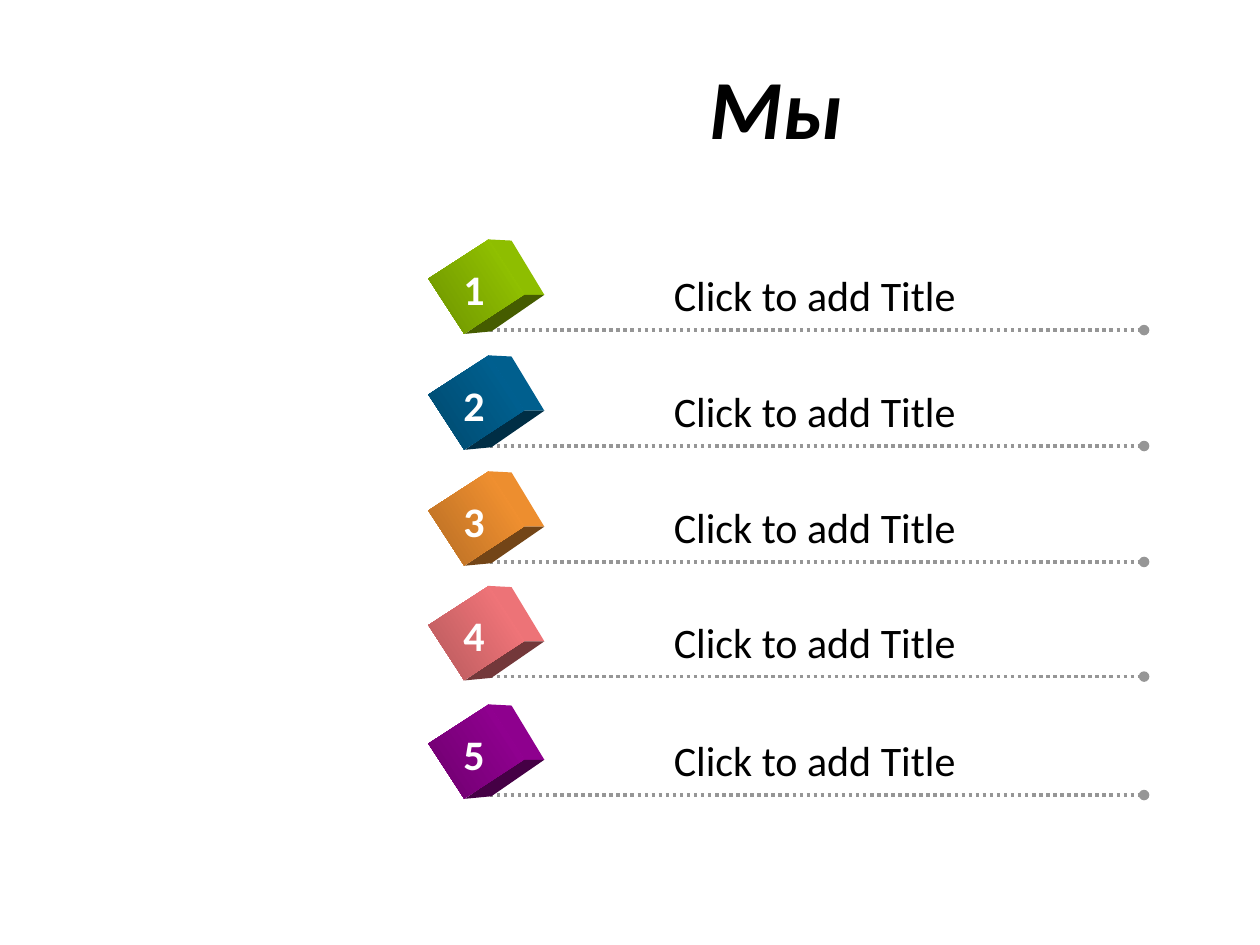
from dataclasses import dataclass

from lxml.etree import SubElement
from pptx import Presentation
from pptx.dml.color import RGBColor
from pptx.enum.dml import MSO_LINE
from pptx.enum.shapes import MSO_CONNECTOR, MSO_SHAPE
from pptx.enum.text import MSO_ANCHOR, MSO_AUTO_SIZE, PP_ALIGN
from pptx.oxml.ns import qn
from pptx.shapes.group import GroupShape
from pptx.slide import Slide
from pptx.util import Inches, Pt

FONT = "Calibri"
BLACK = RGBColor(0x00, 0x00, 0x00)
WHITE = RGBColor(0xFF, 0xFF, 0xFF)
GRAY = RGBColor(0x96, 0x96, 0x96)
GREEN = RGBColor(0x99, 0xCC, 0x00)
DARK_GREEN = RGBColor(0x6D, 0x92, 0x00)
BLUE = RGBColor(0x00, 0x66, 0x99)
DARK_BLUE = RGBColor(0x00, 0x49, 0x6D)
ORANGE = RGBColor(0xFF, 0x99, 0x33)
DARK_ORANGE = RGBColor(0xB6, 0x6D, 0x24)
PINK = RGBColor(0xFF, 0x7C, 0x80)
DARK_PINK = RGBColor(0xB6, 0x59, 0x5C)
PURPLE = RGBColor(0x99, 0x00, 0x99)
DARK_PURPLE = RGBColor(0x6D, 0x00, 0x6D)

CUBE_LEFT, CUBE_WIDTH, CUBE_HEIGHT = 3.52, 0.52, 0.57
# Corners of the cube's side faces, measured from the row's line
RIGHT_FACE = [(3.87, -0.72), (4.06, -0.71), (4.32, -0.28), (4.14, -0.28)]
BOTTOM_FACE = [(3.69, 0.03), (4.14, -0.28), (4.32, -0.28), (3.90, 0.01)]


@dataclass(frozen=True)
class Row:
    number: str
    line_y: float
    light: RGBColor
    dark: RGBColor
    title: str = "Click to add Title"


ROWS = [
    Row("1", 2.62, GREEN, DARK_GREEN),
    Row("2", 3.54, BLUE, DARK_BLUE),
    Row("3", 4.46, ORANGE, DARK_ORANGE),
    Row("4", 5.37, PINK, DARK_PINK),
    Row("5", 6.31, PURPLE, DARK_PURPLE),
]


def shade(color: RGBColor, factor: float) -> RGBColor:
    return RGBColor(*(round(channel * factor) for channel in color))


def add_title(slide: Slide, text: str) -> None:
    title = slide.shapes.title
    title.left, title.top = Inches(1.85), Inches(0.4)
    title.width, title.height = Inches(8.62), Inches(0.98)
    title.text_frame.text = text
    title.text_frame.vertical_anchor = MSO_ANCHOR.MIDDLE
    paragraph = title.text_frame.paragraphs[0]
    paragraph.alignment = PP_ALIGN.CENTER
    paragraph.line_spacing = 0.9
    font = paragraph.font
    font.name, font.size = FONT, Pt(48)
    font.bold = font.italic = True
    font.color.rgb = BLACK


def add_dotted_line(group: GroupShape, y: float) -> None:
    connector = group.shapes.add_connector(
        MSO_CONNECTOR.STRAIGHT, Inches(3.83), Inches(y), Inches(9.08), Inches(y))
    line = connector.line
    line.color.rgb = GRAY
    line.width = Pt(2)
    line.dash_style = MSO_LINE.ROUND_DOT
    properties = connector._element.spPr
    SubElement(properties.find(qn("a:ln")), qn("a:tailEnd"), type="oval")
    SubElement(properties, qn("a:effectLst"))


def add_face(group: GroupShape, corners: list[tuple[float, float]],
             line_y: float, color: RGBColor) -> None:
    points = [(Inches(x), Inches(line_y + dy)) for x, dy in corners]
    builder = group.shapes.build_freeform(*points[0])
    builder.add_line_segments(points[1:], close=True)
    face = builder.convert_to_shape()
    face.shadow.inherit = False
    face.fill.solid()
    face.fill.fore_color.rgb = color
    face.line.fill.background()


def add_cube(group: GroupShape, row: Row) -> None:
    add_face(group, RIGHT_FACE, row.line_y, shade(row.light, 0.93))
    add_face(group, BOTTOM_FACE, row.line_y, shade(row.light, 0.45))
    front = group.shapes.add_shape(
        MSO_SHAPE.RECTANGLE, Inches(CUBE_LEFT), Inches(row.line_y - 0.63),
        Inches(CUBE_WIDTH), Inches(CUBE_HEIGHT))
    front.rotation = 57
    front.shadow.inherit = False
    front.line.fill.background()
    front.fill.gradient()
    front.fill.gradient_angle = 270
    for stop, color in zip(front.fill.gradient_stops, (row.light, row.dark)):
        stop.color.rgb = color


def add_label(group: GroupShape, text: str, left: float, top: float,
              width: float, color: RGBColor, bold: bool = False) -> None:
    box = group.shapes.add_textbox(
        Inches(left), Inches(top), Inches(width), Inches(0.5))
    frame = box.text_frame
    frame.word_wrap = False
    frame.auto_size = MSO_AUTO_SIZE.SHAPE_TO_FIT_TEXT
    frame.text = text
    font = frame.paragraphs[0].font
    font.name, font.size, font.bold = FONT, Pt(24), bold
    font.color.rgb = color


def add_row(slide: Slide, row: Row) -> None:
    group = slide.shapes.add_group_shape()
    add_dotted_line(group, row.line_y)
    add_cube(group, row)
    add_label(group, row.title, 5.25, row.line_y - 0.53, 2.67, BLACK)
    add_label(group, row.number, 3.58, row.line_y - 0.58, 0.39, WHITE, bold=True)


def main() -> None:
    presentation = Presentation()
    presentation.slide_width, presentation.slide_height = Inches(10), Inches(7.5)
    slide = presentation.slides.add_slide(presentation.slide_layouts[5])
    add_title(slide, "Мы")
    for row in ROWS:
        add_row(slide, row)
    presentation.save("out.pptx")


if __name__ == "__main__":
    main()
